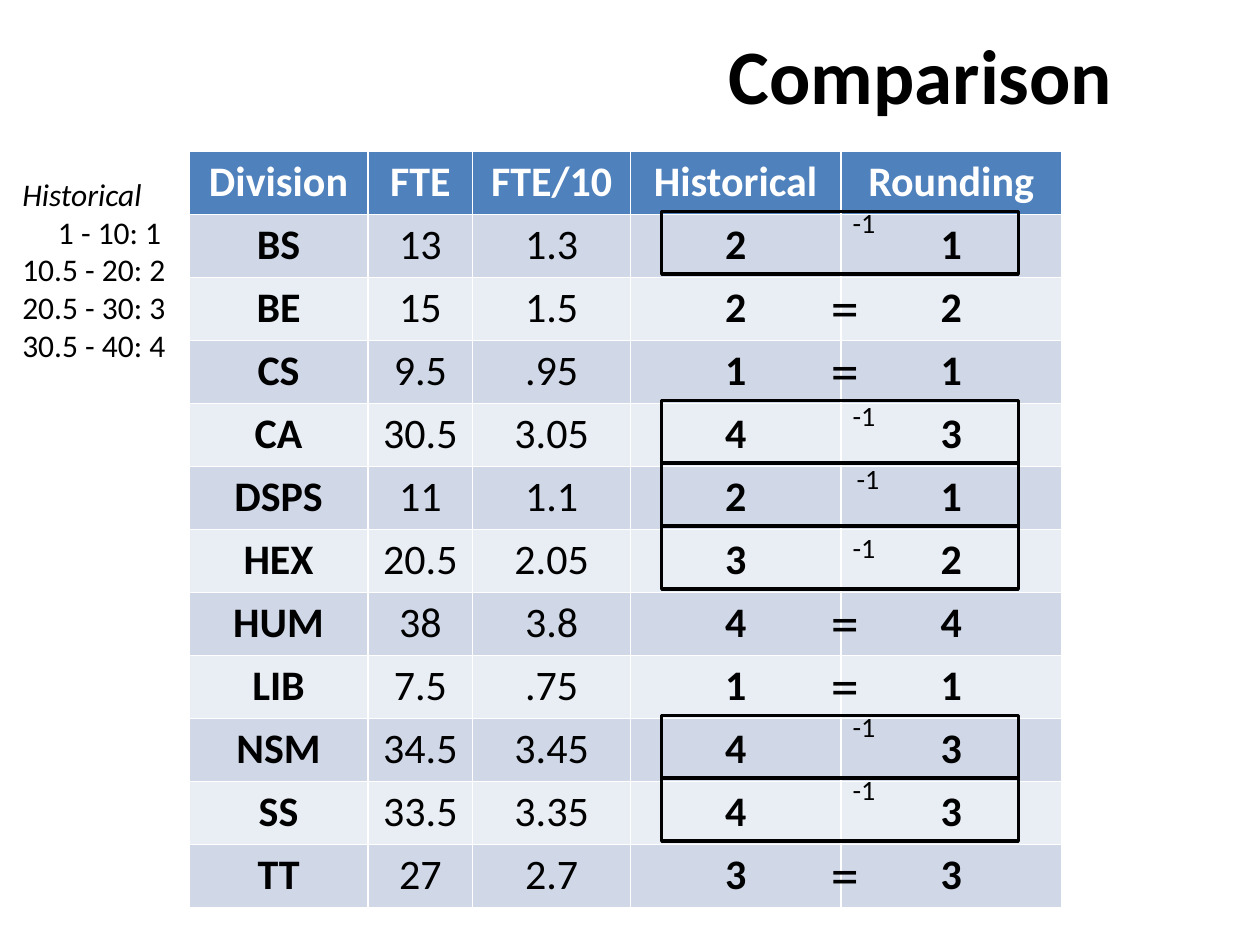
import pptx
import pptx.dml.color
import pptx.enum.shapes
import pptx.enum.text
import pptx.util

Cm = pptx.util.Cm
Pt = pptx.util.Pt
CENTER = pptx.enum.text.PP_ALIGN.CENTER

TABLE_LEFT, TABLE_TOP, ROW_HEIGHT = 3.81, 3.05, 1.27
COLUMN_WIDTHS = [3.61, 2.11, 3.18, 4.24, 4.45]
HEADERS = ["Division", "FTE", "FTE/10", "Historical", "Rounding"]
DIVISIONS = [
    ["BS", "13", "1.3", "2", "1"],
    ["BE", "15", "1.5", "2", "2"],
    ["CS", "9.5", ".95", "1", "1"],
    ["CA", "30.5", "3.05", "4", "3"],
    ["DSPS", "11", "1.1", "2", "1"],
    ["HEX", "20.5", "2.05", "3", "2"],
    ["HUM", "38", "3.8", "4", "4"],
    ["LIB", "7.5", ".75", "1", "1"],
    ["NSM", "34.5", "3.45", "4", "3"],
    ["SS", "33.5", "3.35", "4", "3"],
    ["TT", "27", "2.7", "3", "3"],
]
CHANGE_POSITIONS = {
    "BS": (16.94, 4.01),
    "CA": (16.94, 7.9),
    "DSPS": (17.02, 9.17),
    "HEX": (16.94, 10.57),
    "NSM": (16.94, 14.17),
    "SS": (16.94, 15.44),
}
BRACKETS = ["10.5 - 20: 2", "20.5 - 30: 3", "30.5 - 40: 4"]


def rgb(value):
    return pptx.dml.color.RGBColor.from_string(value)


def write(p, text, size=18, color="000000", bold=False, italic=False, align=None, indent=0):
    if indent:
        p._p.get_or_add_pPr().set("marL", str(Cm(indent)))
    p.alignment = align
    r = p.add_run()
    r.text = text
    r.font.name = "Calibri"
    r.font.size = Pt(size)
    r.font.bold = bold
    r.font.italic = italic
    r.font.color.rgb = rgb(color)


class SlideBuilder:
    """Holds the colours and the current slide, and adds each kind of element."""

    header_fill = "4F81BD"
    band_fills = ["D0D8E8", "E9EDF4"]
    line_color = "000000"

    def __init__(self, s):
        self.s = s

    def text(self, left, top, width, height, text, **fmt):
        sp = self.s.shapes.add_textbox(Cm(left), Cm(top), Cm(width), Cm(height))
        tf = sp.text_frame
        tf.word_wrap = False
        write(tf.paragraphs[0], text, **fmt)
        return tf

    def box(self, left, top, width, height):
        sp = self.s.shapes.add_shape(
            pptx.enum.shapes.MSO_SHAPE.RECTANGLE, Cm(left), Cm(top), Cm(width), Cm(height))
        sp.shadow.inherit = False
        sp.fill.background()
        sp.line.color.rgb = rgb(self.line_color)
        sp.line.width = Pt(2)

    def table(self, left, top, widths, row_height, rows):
        table = self.s.shapes.add_table(
            len(rows), len(widths), Cm(left), Cm(top),
            Cm(sum(widths)), Cm(row_height * len(rows))).table
        for column, width in zip(table.columns, widths):
            column.width = Cm(width)
        for i, values in enumerate(rows):
            table.rows[i].height = Cm(row_height)
            for j, value in enumerate(values):
                cell = table.cell(i, j)
                cell.margin_top = cell.margin_bottom = Cm(0.11)
                cell.fill.solid()
                cell.fill.fore_color.rgb = rgb(
                    self.band_fills[(i - 1) % 2] if i else self.header_fill)
                write(cell.text_frame.paragraphs[0], value, size=24,
                      color="000000" if i else "FFFFFF",
                      bold=i == 0 or j not in (1, 2), align=CENTER)


def main():
    prs = pptx.Presentation()
    prs.slide_width, prs.slide_height = Cm(25.4), Cm(19.05)
    slide = SlideBuilder(prs.slides.add_slide(prs.slide_layouts[6]))

    title = slide.text(14.4, 0.43, 8.33, 2.13, "Comparison", size=44, bold=True, align=CENTER)
    title.vertical_anchor = pptx.enum.text.MSO_ANCHOR.MIDDLE
    slide.table(TABLE_LEFT, TABLE_TOP, COLUMN_WIDTHS, ROW_HEIGHT, [HEADERS] + DIVISIONS)

    for row, (division, *_) in enumerate(DIVISIONS, 1):
        top = TABLE_TOP + row * ROW_HEIGHT
        if division in CHANGE_POSITIONS:
            slide.box(13.34, top - 0.06, 7.19, ROW_HEIGHT)
            slide.text(*CHANGE_POSITIONS[division], 0.97, 0.94, "-1", size=16)
        else:
            slide.text(16.5, top - 0.22, 1.09, 1.63, "=", size=32)

    tf = slide.text(0.2, 3.4, 3.5, 4.11, "Historical", italic=True)
    write(tf.add_paragraph(), "1 - 10: 1", indent=0.72)
    for bracket in BRACKETS:
        write(tf.add_paragraph(), bracket)

    prs.save("out.pptx")


if __name__ == "__main__":
    main()
